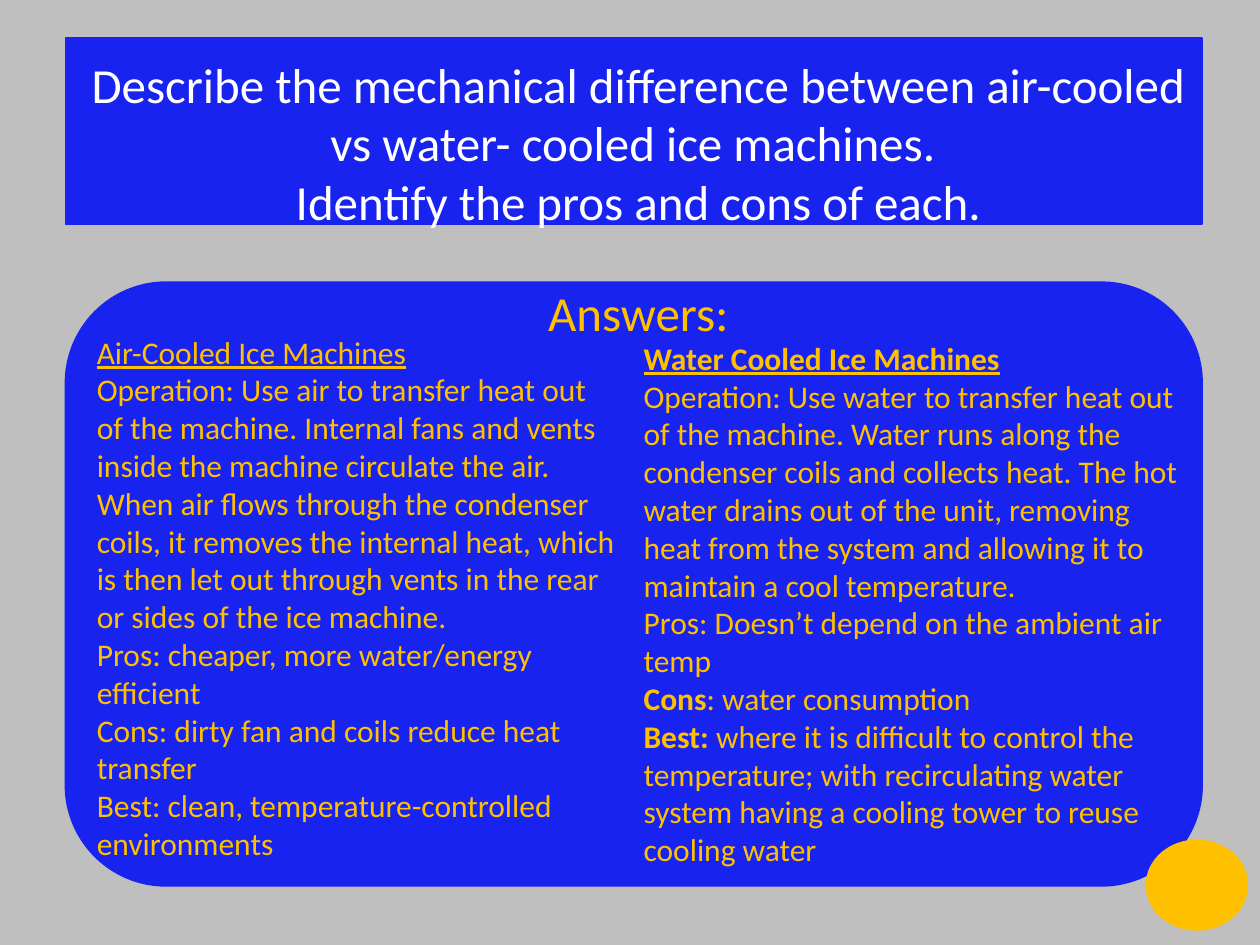
"""Build the ice machine question and answer slide."""
from dataclasses import dataclass

from pptx import Presentation
from pptx import util as u
from pptx.dml.color import RGBColor
from pptx.enum import shapes, text

PX = u.Inches(1) // 100
FONT = "Calibri"
HUES = {"back": "BFBFBF", "blue": "1923EF", "gold": "FFC000", "white": "FFFFFF"}
MID, LEFT = text.PP_ALIGN.CENTER, text.PP_ALIGN.LEFT


@dataclass(frozen=True)
class Box:
    x: int
    y: int
    w: int
    h: int

    def emu(self) -> list[int]:
        return [n * PX for n in (self.x, self.y, self.w, self.h)]


@dataclass(frozen=True)
class Panel:
    kind: shapes.MSO_SHAPE
    box: Box
    hue: str


@dataclass(frozen=True)
class Line:
    body: str
    lead: str = ""
    bold: bool = False
    under: bool = False


@dataclass(frozen=True)
class Block:
    box: Box
    size: int
    hue: str
    align: text.PP_ALIGN
    lines: tuple[Line, ...]


PANELS = (
    Panel(shapes.MSO_SHAPE.ROUNDED_RECTANGLE, Box(52, 224, 902, 479), "blue"),
    Panel(shapes.MSO_SHAPE.RECTANGLE, Box(52, 30, 902, 148), "blue"),
    Panel(shapes.MSO_SHAPE.OVAL, Box(910, 667, 80, 71), "gold"),
)

BLOCKS = (
    Block(Box(59, 38, 895, 151), 28, "white", MID, (
        Line("Describe the mechanical difference between air-cooled "
             "vs water- cooled ice machines. "),
        Line("Identify the pros and cons of each."),
    )),
    Block(Box(59, 219, 895, 57), 28, "gold", MID, (Line("Answers:"),)),
    Block(Box(67, 259, 433, 434), 18, "gold", LEFT, (
        Line("Air-Cooled Ice Machines", under=True),
        Line("Operation: Use air to transfer heat out of the machine. "
             "Internal fans and vents inside the machine circulate the air. "
             "When air flows through the condenser coils, it removes the "
             "internal heat, which is then let out through vents in the rear "
             "or sides of the ice machine."),
        Line("Pros: cheaper, more water/energy efficient"),
        Line("Cons: dirty fan and coils reduce heat transfer"),
        Line("Best: clean, temperature-controlled environments"),
    )),
    Block(Box(501, 264, 453, 434), 18, "gold", LEFT, (
        Line("Water Cooled Ice Machines", bold=True, under=True),
        Line("Operation: Use water to transfer heat out of the machine. "
             "Water runs along the condenser coils and collects heat. The hot "
             "water drains out of the unit, removing heat from the system and "
             "allowing it to maintain a cool temperature."),
        Line("Pros: Doesn’t depend on the ambient air temp"),
        Line(": water consumption", lead="Cons"),
        Line(" where it is difficult to control the temperature; with "
             "recirculating water system having a cooling tower to reuse "
             "cooling water", lead="Best:"),
    )),
)


def tint(name: str) -> RGBColor:
    return RGBColor.from_string(HUES[name])


def draw_panel(slide, panel: Panel) -> None:
    shape = slide.shapes.add_shape(panel.kind, *panel.box.emu())
    shape.shadow.inherit = False
    shape.fill.solid()
    shape.fill.fore_color.rgb = shape.line.color.rgb = tint(panel.hue)
    shape.line.width = u.Pt(1)


def draw_block(slide, block: Block) -> None:
    frame = slide.shapes.add_textbox(*block.box.emu()).text_frame
    frame.word_wrap = True
    frame.auto_size = text.MSO_AUTO_SIZE.SHAPE_TO_FIT_TEXT
    for i, line in enumerate(block.lines):
        para = frame.add_paragraph() if i else frame.paragraphs[0]
        para.alignment = block.align
        font = para.font
        font.name, font.size = FONT, u.Pt(block.size)
        font.color.rgb = tint(block.hue)
        font.bold, font.underline = line.bold, line.under
        if line.lead:
            lead = para.add_run()
            lead.text, lead.font.bold = line.lead, True
        para.add_run().text = line.body


def main() -> None:
    deck = Presentation()
    deck.slide_width, deck.slide_height = 1000 * PX, 750 * PX
    slide = deck.slides.add_slide(deck.slide_layouts[6])
    slide.background.fill.solid()
    slide.background.fill.fore_color.rgb = tint("back")
    for panel in PANELS:
        draw_panel(slide, panel)
    for block in BLOCKS:
        draw_block(slide, block)
    deck.save("out.pptx")


if __name__ == "__main__":
    main()
